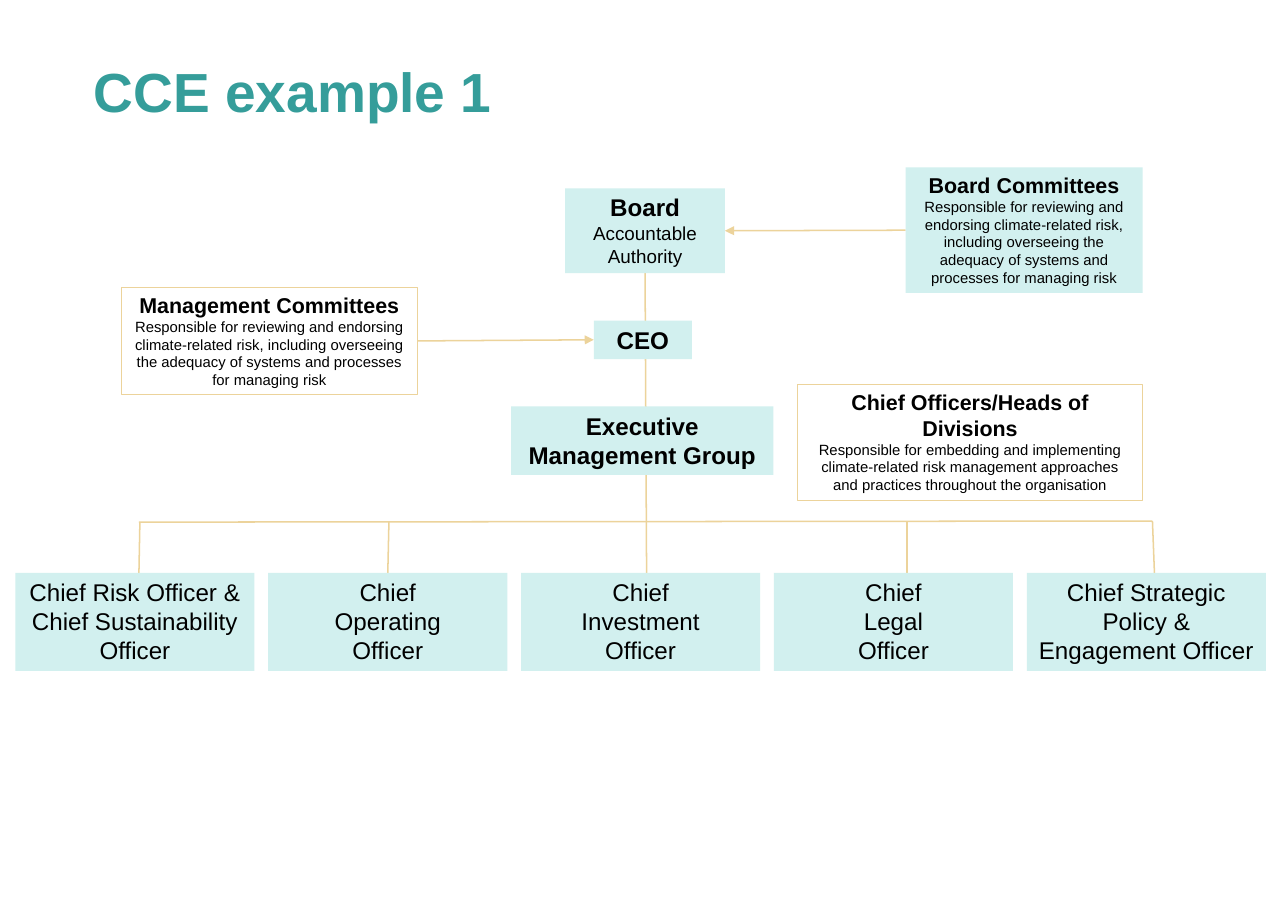
"""Build the CCE example 1 governance chart slide."""
from dataclasses import dataclass
from typing import Any, Optional

from lxml.etree import SubElement
from pptx import Presentation
from pptx.dml.color import RGBColor
from pptx.enum.shapes import MSO_CONNECTOR as Connector, MSO_SHAPE as Shape
from pptx.enum.text import MSO_ANCHOR as Anchor, MSO_AUTO_SIZE as AutoSize, PP_ALIGN as Align
from pptx.oxml.ns import qn
from pptx.util import Inches, Pt


@dataclass(frozen=True)
class Theme:
    font: str = "Arial"
    title: RGBColor = RGBColor(0x35, 0x9D, 0x9A)
    text: RGBColor = RGBColor(0, 0, 0)
    fill: RGBColor = RGBColor(0xD2, 0xF0, 0xEF)
    line: RGBColor = RGBColor(0xEC, 0xD3, 0x9B)
    title_size: float = 36
    role_size: float = 15.8
    group_size: float = 14
    caption_size: float = 12.3
    detail_size: float = 9.7
    link_width: float = 1
    border_width: float = 0.75


@dataclass(frozen=True)
class Line:
    text: str
    size: float
    bold: bool = False


@dataclass(frozen=True)
class Box:
    name: str
    left: float
    top: float
    width: float
    height: float
    lines: tuple[Line, ...]
    filled: bool = True


@dataclass(frozen=True)
class Link:
    start: tuple[float, float]
    end: tuple[float, float]
    start_joint: Optional[tuple[str, int]] = None
    end_joint: Optional[tuple[str, int]] = None
    arrow: bool = False


THEME = Theme()
TOP, LEFT, BOTTOM, RIGHT = range(4)
REVIEW = ("Responsible for reviewing and endorsing climate-related risk, including overseeing "
          "the adequacy of systems and processes for managing risk")
EMBED = ("Responsible for embedding and implementing climate-related risk management "
         "approaches and practices throughout the organisation")


def role(text: str) -> Line:
    return Line(text, THEME.role_size, True)


def group(title: str, detail: str) -> tuple[Line, ...]:
    return Line(title, THEME.group_size, True), Line(detail, THEME.detail_size)


GOVERNANCE = (
    Box("board", 5.13, 1.71, 1.45, 0.77,
        (role("Board"), Line("Accountable Authority", THEME.caption_size))),
    Box("board committees", 8.22, 1.52, 2.15, 1.14, group("Board Committees", REVIEW)),
    Box("ceo", 5.39, 2.91, 0.89, 0.35, (role("CEO"),)),
    Box("executive", 4.64, 3.69, 2.38, 0.62, (role("Executive Management Group"),)),
    Box("management committees", 1.1, 2.61, 2.69, 0.97,
        group("Management Committees", REVIEW), False),
    Box("heads", 7.24, 3.49, 3.13, 1.05, group("Chief Officers/Heads of Divisions", EMBED), False),
)
OFFICERS = {
    "risk": ("Chief Risk Officer & Chief Sustainability Officer",),
    "operating": ("Chief", "Operating", "Officer"),
    "investment": ("Chief", "Investment", "Officer"),
    "legal": ("Chief", "Legal", "Officer"),
    "strategy": ("Chief Strategic Policy & Engagement Officer",),
}
FIRST_LEFT, LAST_LEFT, OFFICER_TOP = 0.14, 9.32, 5.2
OFFICER_STEP = (LAST_LEFT - FIRST_LEFT) / (len(OFFICERS) - 1)
LINKS = (
    Link((5.86, 2.48), (5.87, 5.41), start_joint=("board", BOTTOM)),
    Link((8.22, 2.1), (6.58, 2.1), ("board committees", LEFT), ("board", RIGHT), True),
    Link((3.79, 3.09), (5.39, 3.09), ("management committees", RIGHT), ("ceo", LEFT), True),
    Link((1.26, 4.74), (10.46, 4.73)),
    Link((1.27, 4.74), (1.25, 5.77)),
    Link((3.53, 4.74), (3.53, 5.21), end_joint=("operating", TOP)),
    Link((8.23, 4.73), (8.23, 5.41)),
    Link((10.46, 4.73), (10.48, 5.25)),
)


def apply(target: Any, formats: dict[str, Any]) -> None:
    for name, value in formats.items():
        setattr(target, name, value)


def write(frame: Any, lines: tuple[Line, ...], color: RGBColor, align: Align) -> None:
    for index, line in enumerate(lines):
        paragraph = frame.paragraphs[0] if index == 0 else frame.add_paragraph()
        apply(paragraph, {"text": line.text, "alignment": align})
        apply(paragraph.font, {"name": THEME.font, "size": Pt(line.size), "bold": line.bold})
        paragraph.font.color.rgb = color


def add_title(slide: Any, text: str) -> None:
    title = slide.shapes.title
    apply(title, {"left": Inches(0.85), "top": Inches(0.59),
                  "width": Inches(10.28), "height": Inches(0.69)})
    frame = title.text_frame
    apply(frame, {"margin_left": 0, "margin_top": 0, "margin_right": 0, "margin_bottom": 0,
                  "vertical_anchor": Anchor.TOP, "auto_size": AutoSize.NONE, "word_wrap": True})
    write(frame, (Line(text, THEME.title_size, True),), THEME.title, Align.LEFT)
    frame.paragraphs[0].line_spacing = 0.9


def add_box(slide: Any, box: Box) -> Any:
    shape = slide.shapes.add_shape(Shape.RECTANGLE, Inches(box.left), Inches(box.top),
                                   Inches(box.width), Inches(box.height))
    shape.shadow.inherit = False
    if box.filled:
        shape.fill.solid()
        shape.fill.fore_color.rgb = THEME.fill
        shape.line.fill.background()
    else:
        shape.fill.background()
        shape.line.color.rgb = THEME.line
        shape.line.width = Pt(THEME.border_width)
    apply(shape.text_frame, {"margin_left": Inches(0.09), "margin_right": Inches(0.09),
                             "margin_top": Inches(0.04), "margin_bottom": Inches(0.04),
                             "vertical_anchor": Anchor.TOP, "word_wrap": True,
                             "auto_size": AutoSize.SHAPE_TO_FIT_TEXT})
    write(shape.text_frame, box.lines, THEME.text, Align.CENTER)
    return shape


def add_link(slide: Any, link: Link, shapes: dict[str, Any]) -> None:
    connector = slide.shapes.add_connector(
        Connector.STRAIGHT, *(Inches(value) for value in link.start + link.end))
    for joint, connect in ((link.start_joint, connector.begin_connect),
                           (link.end_joint, connector.end_connect)):
        if joint:
            name, side = joint
            connect(shapes[name], side)
    connector.line.color.rgb = THEME.line
    connector.line.width = Pt(THEME.link_width)
    if link.arrow:
        SubElement(connector.line._get_or_add_ln(), qn("a:tailEnd"), type="triangle")
    SubElement(connector._element.spPr, qn("a:effectLst"))
    slide.shapes._spTree.insert(2, connector._element)


def main() -> None:
    presentation = Presentation()
    apply(presentation, {"slide_width": Inches(11.69), "slide_height": Inches(8.27)})
    slide = presentation.slides.add_slide(presentation.slide_layouts[5])
    add_title(slide, "CCE example 1")
    officers = tuple(
        Box(name, FIRST_LEFT + index * OFFICER_STEP, OFFICER_TOP, 2.17, 0.89,
            tuple(Line(text, THEME.role_size) for text in texts))
        for index, (name, texts) in enumerate(OFFICERS.items()))
    shapes = {box.name: add_box(slide, box) for box in GOVERNANCE + officers}
    for link in LINKS:
        add_link(slide, link, shapes)
    presentation.save("out.pptx")


if __name__ == "__main__":
    main()
